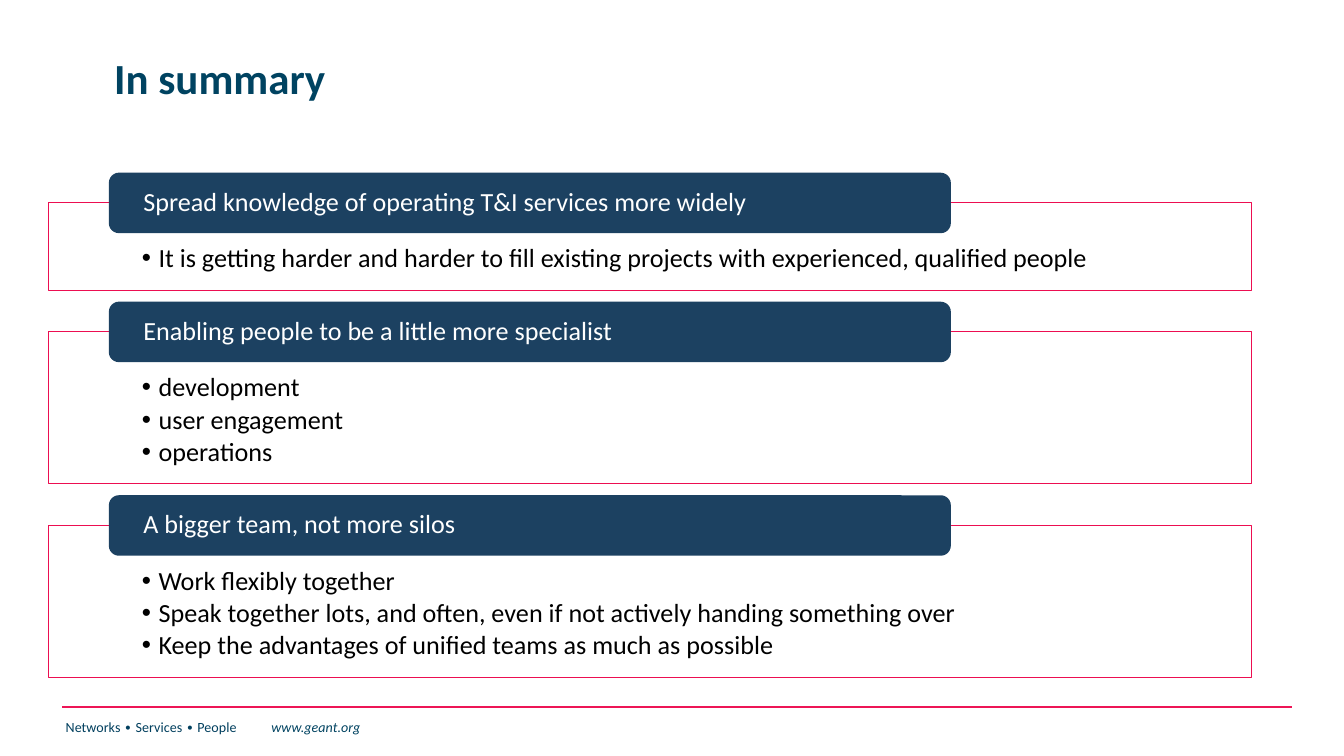
from dataclasses import dataclass

from lxml.etree import SubElement
from pptx import Presentation
from pptx.dml.color import RGBColor
from pptx.enum.shapes import MSO_CONNECTOR, MSO_SHAPE
from pptx.enum.text import MSO_ANCHOR, MSO_AUTO_SIZE, PP_ALIGN
from pptx.oxml.ns import qn
from pptx.slide import Slide
from pptx.util import Emu, Pt

SCALE = 4572
FONT = "Calibri"
NAVY, TEAL, INK = "1C4161", "004361", "003F5E"
PINK, ROSE, WHITE, BLACK = "EC0E51", "ED1556", "FFFFFF", "000000"
LEFT, WIDTH, GAP = 72, 1790, 62


@dataclass
class Block:
    head: str
    items: list[str]

    @property
    def height(self) -> int:
        return 82 + 48 * len(self.items)


BLOCKS = [
    Block("Spread knowledge of operating T&I services more widely",
          ["It is getting harder and harder to fill existing projects "
           "with experienced, qualified people"]),
    Block("Enabling people to be a little more specialist",
          ["development", "user engagement", "operations"]),
    Block("A bigger team, not more silos",
          ["Work flexibly together",
           "Speak together lots, and often, even if not actively "
           "handing something over",
           "Keep the advantages of unified teams as much as possible"]),
]


def px(size: int) -> Emu:
    return Emu(size * SCALE)


def tint(code: str) -> RGBColor:
    return RGBColor.from_string(code)


def place(shape, left: int, top: int, width: int, height: int) -> None:
    shape.left, shape.top = px(left), px(top)
    shape.width, shape.height = px(width), px(height)


def frame(shape, anchor, pads: tuple[int, int, int, int]):
    text = shape.text_frame
    text.word_wrap = True
    text.auto_size = MSO_AUTO_SIZE.NONE
    text.vertical_anchor = anchor
    text.margin_left, text.margin_top, text.margin_right, text.margin_bottom = map(px, pads)
    return text


def write(para, words: str, size: float, color: str,
          bold: bool = False, slant: bool = False) -> None:
    run = para.add_run()
    run.text = words
    font = run.font
    font.name, font.size = FONT, Pt(size)
    font.bold, font.italic = bold, slant
    font.color.rgb = tint(color)


def align(para, after: float = 0) -> None:
    para.alignment = PP_ALIGN.LEFT
    para.line_spacing = 0.9
    para.space_before, para.space_after = Pt(0), Pt(after)


def bullet(para) -> None:
    props = para._p.get_or_add_pPr()
    props.set("marL", str(px(25)))
    props.set("indent", str(px(-25)))
    SubElement(props, qn("a:buFont")).set("typeface", "Arial")
    SubElement(props, qn("a:buChar")).set("char", "•")


def draw_title(slide: Slide) -> None:
    title = slide.shapes.title
    place(title, 150, 49, 1320, 142)
    para = frame(title, MSO_ANCHOR.MIDDLE, (20, 10, 20, 10)).paragraphs[0]
    align(para)
    write(para, "In summary", 23, TEAL, bold=True)


def draw_list(panel, block: Block, top: int) -> None:
    place(panel, LEFT, top, WIDTH, block.height)
    panel.fill.solid()
    panel.fill.fore_color.rgb = tint(WHITE)
    panel.line.color.rgb = tint(PINK)
    panel.line.width = Pt(0.5)
    text = frame(panel, MSO_ANCHOR.TOP, (139, 63, 139, 22))
    for rank, item in enumerate(block.items):
        para = text.add_paragraph() if rank else text.paragraphs[0]
        bullet(para)
        align(para, 2.1)
        write(para, item, 14, BLACK)


def draw_head(slide: Slide, block: Block, top: int) -> None:
    pill = slide.shapes.add_shape(MSO_SHAPE.ROUNDED_RECTANGLE,
                                  px(162), px(top - 45), px(1253), px(90))
    pill.shadow.inherit = False
    pill.fill.solid()
    pill.fill.fore_color.rgb = tint(NAVY)
    pill.line.fill.background()
    para = frame(pill, MSO_ANCHOR.MIDDLE, (47, 0, 47, 0)).paragraphs[0]
    align(para)
    write(para, block.head, 14, WHITE)


def draw_foot(slide: Slide) -> None:
    rule = slide.shapes.add_connector(MSO_CONNECTOR.STRAIGHT,
                                      px(93), px(1052), px(1923), px(1052))
    rule.line.color.rgb = tint(ROSE)
    rule.line.width = Pt(1)
    SubElement(rule._element.spPr, qn("a:effectLst"))
    box = slide.shapes.add_textbox(px(78), px(1060), px(682), px(65))
    para = frame(box, MSO_ANCHOR.TOP, (20, 10, 20, 10)).paragraphs[0]
    tabs = SubElement(para._p.get_or_add_pPr(), qn("a:tabLst"))
    tab = SubElement(tabs, qn("a:tab"))
    tab.set("pos", str(px(306)))
    tab.set("algn", "l")
    write(para, "Networks ∙ Services ∙ People\t", 7.5, INK)
    write(para, "www.geant.org", 7.5, TEAL, slant=True)


def main() -> None:
    deck = Presentation()
    deck.slide_width, deck.slide_height = px(2000), px(1125)
    slide = deck.slides.add_slide(deck.slide_layouts.get_by_name("Comparison"))
    draw_title(slide)
    panels = list(slide.placeholders)[1:]
    top = 302
    for panel, block in zip(panels, BLOCKS):
        draw_list(panel, block, top)
        draw_head(slide, block, top)
        top += block.height + GAP
    for spare in panels[len(BLOCKS):]:
        spare._element.getparent().remove(spare._element)
    draw_foot(slide)
    deck.save("out.pptx")


if __name__ == "__main__":
    main()
